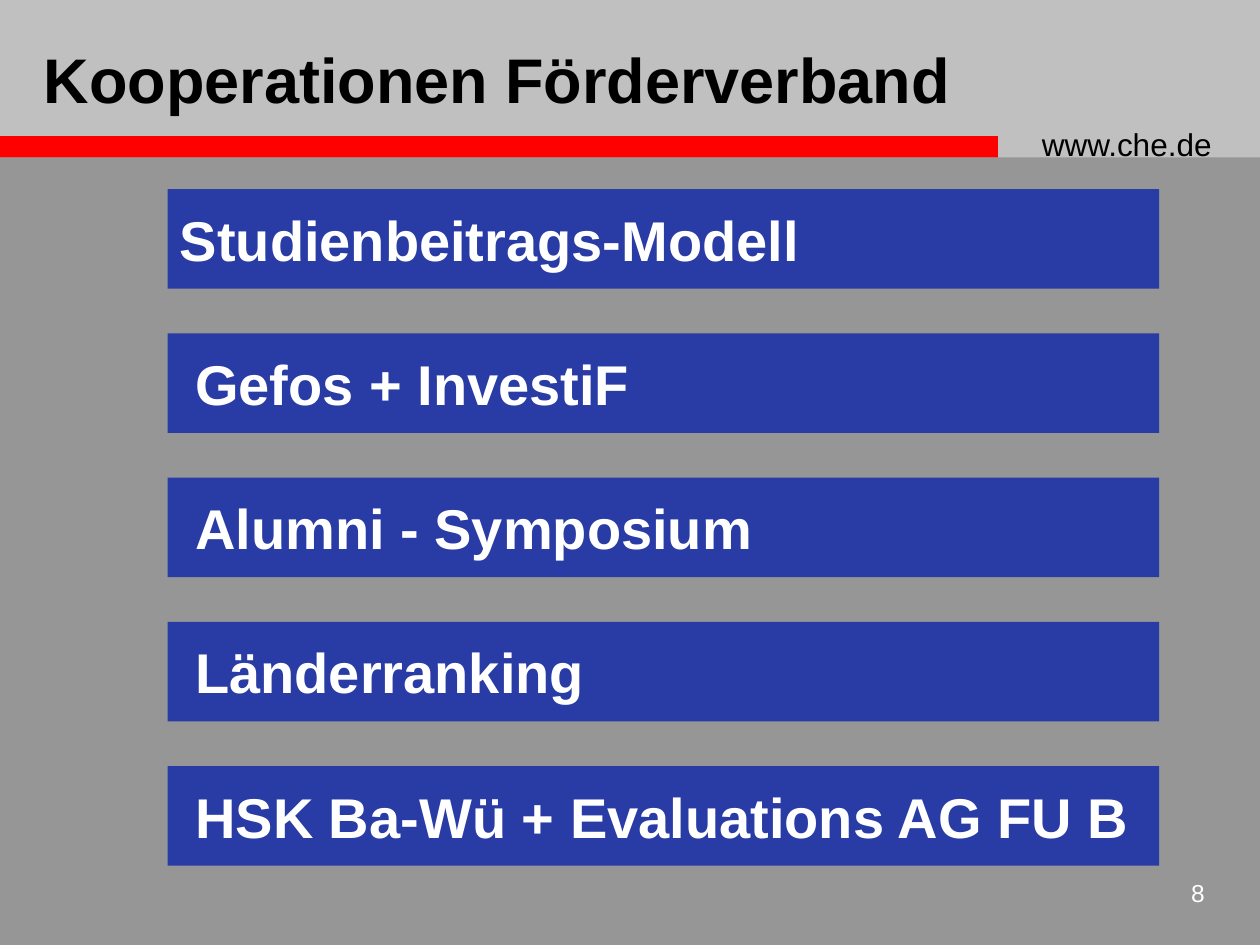
"""Build the slide listing the cooperation projects as a column of bars."""
from dataclasses import dataclass

from pptx import Presentation
from pptx.dml.color import RGBColor
from pptx.enum import shapes, text
from pptx.util import Inches, Pt


@dataclass(frozen=True)
class Theme:
    font: str = "Arial"
    background: str = "969696"
    header: str = "C0C0C0"
    rule: str = "FF0000"
    bar: str = "293BA5"
    dark: str = "000000"
    light: str = "FFFFFF"
    title_size: int = 36
    bar_size: int = 32
    address_size: int = 18
    number_size: int = 14


THEME = Theme()
TITLE = "Kooperationen Förderverband"
ADDRESS = "www.che.de"
PAGE_NUMBER = "8"
PROJECTS = [
    ("Studienbeitrags-Modell", 0.1),
    ("Gefos + InvestiF", 0.22),
    ("Alumni - Symposium", 0.22),
    ("Länderranking", 0.22),
    ("HSK Ba-Wü + Evaluations AG FU B", 0.22),
]
BAR_LEFT, BAR_TOP, BAR_WIDTH, BAR_HEIGHT = 1.33, 1.5, 7.87, 0.79
LAST_BAR_TOP = 6.08
BAR_PITCH = (LAST_BAR_TOP - BAR_TOP) / (len(PROJECTS) - 1)


def add_rectangle(slide, box, color):
    shape = slide.shapes.add_shape(shapes.MSO_SHAPE.RECTANGLE, *map(Inches, box))
    shape.shadow.inherit = False
    shape.fill.solid()
    shape.fill.fore_color.rgb = RGBColor.from_string(color)
    shape.line.fill.background()
    return shape


def write(shape, content, size, color, bold=False, align=text.PP_ALIGN.LEFT,
          anchor=text.MSO_ANCHOR.TOP):
    frame = shape.text_frame
    frame.text = content
    frame.word_wrap = True
    frame.vertical_anchor = anchor
    paragraph = frame.paragraphs[0]
    paragraph.alignment = align
    font = paragraph.runs[0].font
    font.name, font.size, font.bold = THEME.font, Pt(size), bold
    font.color.rgb = RGBColor.from_string(color)


def add_text(slide, box, *args, **options):
    write(slide.shapes.add_textbox(*map(Inches, box)), *args, **options)


def add_title(slide):
    add_text(slide, (0.25, 0.25, 7.42, 0.75), TITLE, THEME.title_size, THEME.dark,
             bold=True, anchor=text.MSO_ANCHOR.MIDDLE)


def add_project_bars(slide):
    for index, (name, inset) in enumerate(PROJECTS):
        top = BAR_TOP + index * BAR_PITCH
        bar = add_rectangle(slide, (BAR_LEFT, top, BAR_WIDTH, BAR_HEIGHT), THEME.bar)
        write(bar, name, THEME.bar_size, THEME.light, bold=True,
              anchor=text.MSO_ANCHOR.MIDDLE)
        bar.text_frame.margin_left = Inches(inset)
        bar.text_frame.margin_right = 0


def main():
    presentation = Presentation()
    presentation.slide_width, presentation.slide_height = Inches(10), Inches(7.5)
    slide = presentation.slides.add_slide(presentation.slide_layouts[6])
    slide.background.fill.solid()
    slide.background.fill.fore_color.rgb = RGBColor.from_string(THEME.background)

    add_rectangle(slide, (0, 0, 10, 1.25), THEME.header)
    add_rectangle(slide, (0, 1.08, 7.92, 0.17), THEME.rule)
    add_text(slide, (8.17, 0.94, 1.75, 0.4), ADDRESS, THEME.address_size, THEME.dark)
    add_text(slide, (9.08, 6.92, 0.58, 0.42), PAGE_NUMBER, THEME.number_size,
             THEME.light, align=text.PP_ALIGN.RIGHT)
    add_title(slide)
    add_project_bars(slide)
    presentation.save("out.pptx")


if __name__ == "__main__":
    main()
